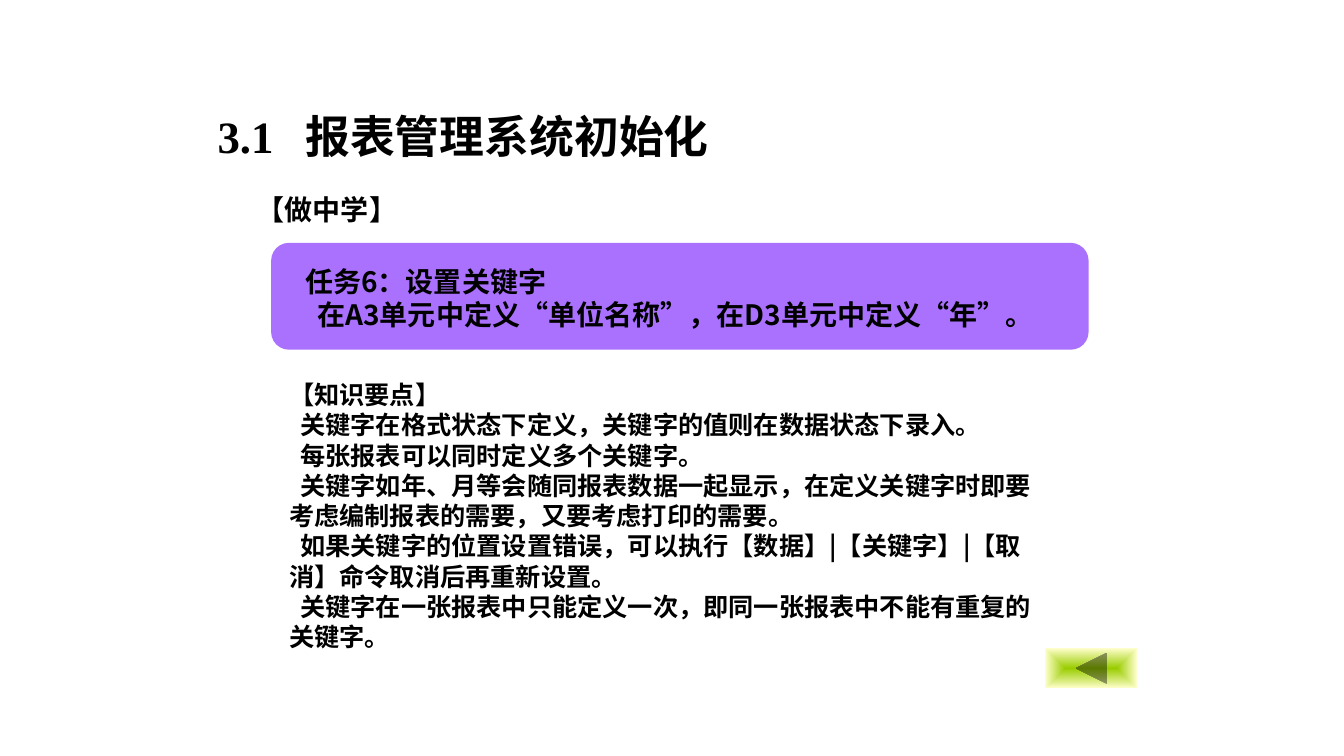
"""Build the slide on defining keywords in a report system."""
from dataclasses import dataclass

from lxml import etree
from pptx import Presentation, util as u
from pptx.dml.color import RGBColor
from pptx.enum import shapes, text
from pptx.oxml import ns

COLUMNS, ROWS = 40, 30


@dataclass(frozen=True)
class Theme:
    ink: str = "000000"
    banner: str = "AA71FF"
    button_centre: str = "99CC00"
    button_edge: str = "FFFFCC"
    sans: str = "Noto Sans CJK SC"
    serif: str = "Times New Roman"
    title: int = 32
    task: int = 20
    points: int = 18


THEME = Theme()


@dataclass(frozen=True)
class Area:
    column: float
    row: float
    columns: float
    rows: float


@dataclass(frozen=True)
class Line:
    words: str
    margin: float = 0
    indent: float = 0


@dataclass(frozen=True)
class Passage:
    area: Area
    lines: tuple[Line, ...]
    size: int
    font: str = THEME.sans
    anchor: text.MSO_ANCHOR = text.MSO_ANCHOR.MIDDLE
    wrap: bool = True


POINTS = (
    "关键字在格式状态下定义，关键字的值则在数据状态下录入。",
    "每张报表可以同时定义多个关键字。",
    "关键字如年、月等会随同报表数据一起显示，在定义关键字时即要考虑编制报表的需要，又要考虑打印的需要。",
    "如果关键字的位置设置错误，可以执行【数据】|【关键字】|【取消】命令取消后再重新设置。",
    "关键字在一张报表中只能定义一次，即同一张报表中不能有重复的关键字。",
)
PASSAGES = (
    Passage(Area(8.31, 14.8, 23.04, 11.32),
            (Line("【知识要点】"), *(Line(point, indent=0.11) for point in POINTS)),
            THEME.points),
    Passage(Area(7.35, 7.44, 4.8, 1.76), (Line("【做中学】"),),
            THEME.task, THEME.serif, wrap=False),
    Passage(Area(8.79, 10.28, 23.73, 3.08),
            (Line("任务6：设置关键字"),
             Line("在A3单元中定义“单位名称”，在D3单元中定义“年”。", indent=0.12)),
            THEME.task, anchor=text.MSO_ANCHOR.TOP),
    Passage(Area(6.18, 4.12, 26.7, 2.56),
            (Line("3.1\t报表管理系统初始化", margin=0.87, indent=-0.87),),
            THEME.title, THEME.serif, text.MSO_ANCHOR.TOP),
)
BANNER = Area(8.07, 9.64, 24.33, 4.24)
BACK_BUTTON = Area(31.11, 25.72, 2.73, 1.6)


def place(area: Area, deck) -> tuple[int, int, int, int]:
    """Turn grid units into slide lengths."""
    column, row = deck.slide_width / COLUMNS, deck.slide_height / ROWS
    return (round(area.column * column), round(area.row * row),
            round(area.columns * column), round(area.rows * row))


def draw_shape(deck, slide, kind: shapes.MSO_SHAPE, area: Area):
    """Add a preset shape without outline or shadow."""
    shape = slide.shapes.add_shape(kind, *place(area, deck))
    shape.shadow.inherit = False
    shape.line.fill.background()
    return shape


def glow_from_centre(shape, centre: str, edge: str) -> None:
    """Fill a shape with a rectangular gradient."""
    shape.fill.gradient()
    for stop, colour, position in zip(shape.fill.gradient_stops, (centre, edge), (0, 1)):
        stop.color.rgb = RGBColor.from_string(colour)
        stop.position = position
    gradient = shape._element.spPr.find(ns.qn("a:gradFill"))
    gradient.remove(gradient.find(ns.qn("a:lin")))
    spread = etree.SubElement(gradient, ns.qn("a:path"), {"path": "rect"})
    etree.SubElement(spread, ns.qn("a:fillToRect"), dict.fromkeys("ltrb", "50000"))


def write_line(paragraph, line: Line, passage: Passage) -> None:
    """Write one paragraph with its font and indent."""
    paragraph.text = line.words
    font = paragraph.font
    font.name, font.size, font.bold = passage.font, u.Pt(passage.size), True
    font.color.rgb = RGBColor.from_string(THEME.ink)
    settings = paragraph._p.get_or_add_pPr()
    etree.SubElement(settings.find(ns.qn("a:defRPr")), ns.qn("a:ea"), typeface=THEME.sans)
    settings.set("marL", str(u.Inches(line.margin)))
    settings.set("indent", str(u.Inches(line.indent)))


def draw_passage(deck, slide, passage: Passage) -> None:
    """Add a text box holding the lines of a passage."""
    frame = slide.shapes.add_textbox(*place(passage.area, deck)).text_frame
    frame.word_wrap = passage.wrap
    frame.auto_size = text.MSO_AUTO_SIZE.SHAPE_TO_FIT_TEXT
    frame.vertical_anchor = passage.anchor
    for number, line in enumerate(passage.lines):
        paragraph = frame.add_paragraph() if number else frame.paragraphs[0]
        write_line(paragraph, line, passage)


def main() -> None:
    """Compose and save the slide."""
    deck = Presentation()
    deck.slide_width, deck.slide_height = u.Inches(13.33), u.Inches(7.5)
    slide = deck.slides.add_slide(deck.slide_layouts[6])
    back = draw_shape(deck, slide, shapes.MSO_SHAPE.ACTION_BUTTON_BACK_OR_PREVIOUS, BACK_BUTTON)
    glow_from_centre(back, THEME.button_centre, THEME.button_edge)
    banner = draw_shape(deck, slide, shapes.MSO_SHAPE.ROUNDED_RECTANGLE, BANNER)
    banner.fill.solid()
    banner.fill.fore_color.rgb = RGBColor.from_string(THEME.banner)
    for passage in PASSAGES:
        draw_passage(deck, slide, passage)
    deck.save("out.pptx")


if __name__ == "__main__":
    main()
